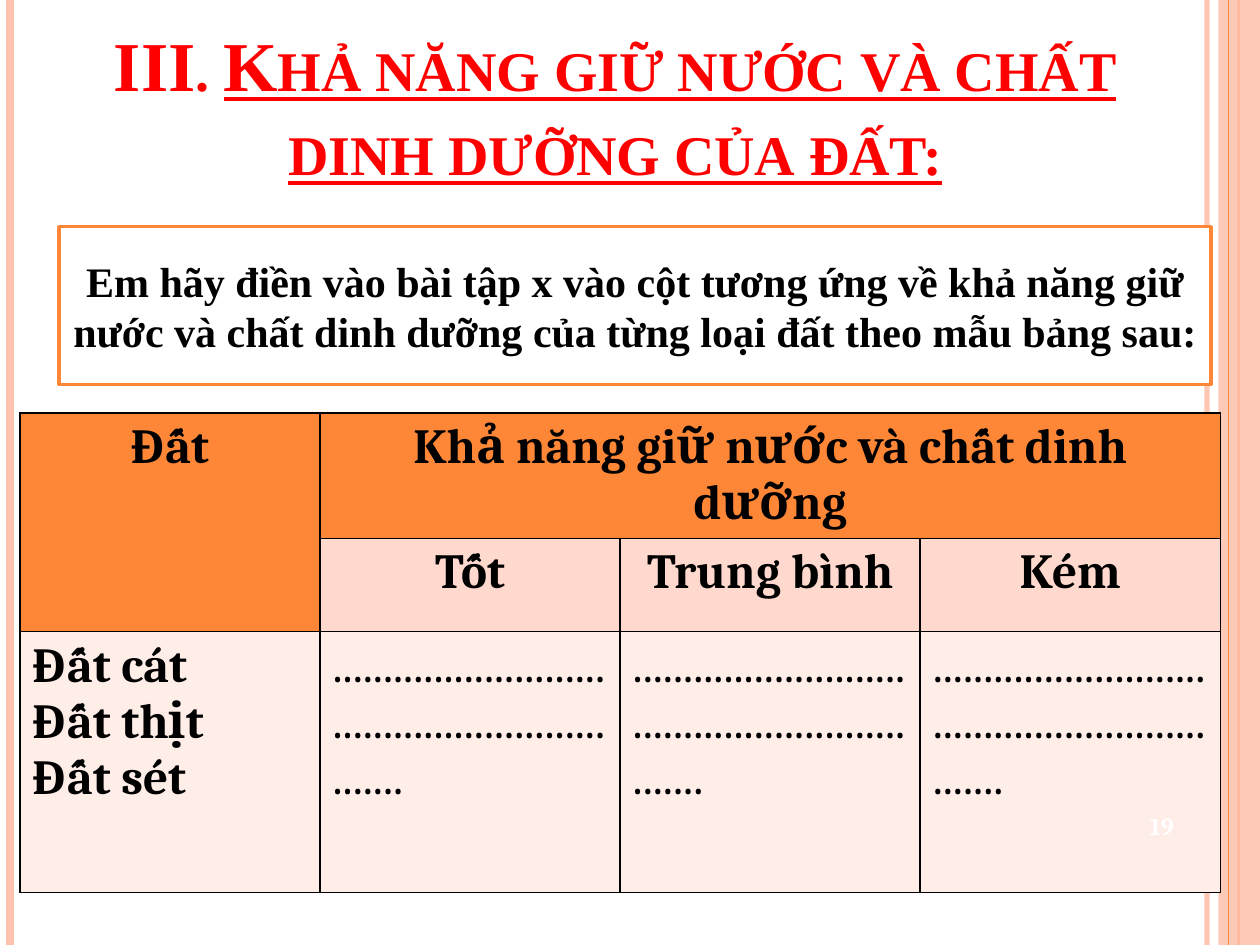
from lxml.etree import SubElement
from pptx import Presentation
from pptx.dml.color import RGBColor
from pptx.enum.shapes import MSO_CONNECTOR, MSO_SHAPE
from pptx.enum.text import MSO_ANCHOR, MSO_AUTO_SIZE, PP_ALIGN
from pptx.oxml.ns import qn
from pptx.util import Cm, Pt

ORANGE = "FE8637"
PEACH = "FEC3AE"
BLACK = "000000"
HEADING_FONT = "Times New Roman"
TABLE_FONT = "Cambria"
SLIDE_WIDTH, SLIDE_HEIGHT = 25.4, 19.05
DOTS = "............................................................."


def color(hex_string):
    """Turn a hex string into a colour."""
    return RGBColor.from_string(hex_string)


def set_alpha(fill_properties, percent):
    """Make the solid fill inside the given element partly transparent."""
    color_element = fill_properties.find(".//" + qn("a:srgbClr"))
    SubElement(color_element, qn("a:alpha"), val=str(percent * 1000))


def format_text(text_frame, size, font_name, hex_string, bold=True, alignment=PP_ALIGN.CENTER):
    """Format every run in a text frame alike."""
    for paragraph in text_frame.paragraphs:
        paragraph.alignment = alignment
        for run in paragraph.runs:
            run.font.size = Pt(size)
            run.font.name = font_name
            run.font.bold = bold
            run.font.color.rgb = color(hex_string)


def add_vertical_line(slide, x, width, hex_string, alpha=100):
    """Draw a line over the full height of the slide."""
    line = slide.shapes.add_connector(MSO_CONNECTOR.STRAIGHT, Cm(x), 0, Cm(x), Cm(SLIDE_HEIGHT))
    line.line.width = Pt(width)
    line.line.color.rgb = color(hex_string)
    properties = line._element.spPr
    if alpha < 100:
        set_alpha(properties, alpha)
    SubElement(properties, qn("a:effectLst"))


def add_rectangle(slide, left, top, width, height, fill):
    """Add a flat rectangle without an outline."""
    rectangle = slide.shapes.add_shape(MSO_SHAPE.RECTANGLE, Cm(left), Cm(top), Cm(width), Cm(height))
    rectangle.shadow.inherit = False
    rectangle.fill.solid()
    rectangle.fill.fore_color.rgb = color(fill)
    rectangle.line.fill.background()
    return rectangle


def add_side_stripes(slide):
    """Add the stripes along the left and right edges."""
    add_vertical_line(slide, 24.33, 3, PEACH, alpha=93)
    add_vertical_line(slide, 0.2, 4.5, PEACH)
    add_vertical_line(slide, 24.97, 1.5, ORANGE)
    band = add_rectangle(slide, 24.56, 0, SLIDE_WIDTH - 24.56, SLIDE_HEIGHT, PEACH)
    set_alpha(band._element.spPr, 87)
    add_vertical_line(slide, 24.77, 0.75, ORANGE)


def fill_title(slide):
    """Write the heading in red small capitals."""
    title = slide.shapes.title
    title.left, title.top, title.width, title.height = Cm(0.79), Cm(0.76), Cm(23.22), Cm(3.18)
    text_frame = title.text_frame
    text_frame.auto_size = MSO_AUTO_SIZE.NONE
    text_frame.vertical_anchor = MSO_ANCHOR.BOTTOM
    paragraph = text_frame.paragraphs[0]
    paragraph.text = "III. "
    heading = paragraph.add_run()
    heading.text = "Khả năng giữ nước và chất dinh dưỡng của đất:"
    heading.font.underline = True
    format_text(text_frame, 40, HEADING_FONT, "FF0000")
    for run in paragraph.runs:
        run.font._element.set("cap", "small")


def add_instruction(slide):
    """Add the framed task for the pupils."""
    frame = add_rectangle(slide, 1.19, 4.57, 23.22, 3.18, "FFFFFF")
    frame.line.color.rgb = color(ORANGE)
    frame.line.width = Pt(2)
    text_frame = frame.text_frame
    text_frame.word_wrap = True
    text_frame.vertical_anchor = MSO_ANCHOR.MIDDLE
    text_frame.text = (
        "Em hãy điền vào bài tập x vào cột tương ứng về khả năng giữ nước "
        "và chất dinh dưỡng của từng loại đất theo mẫu bảng sau:"
    )
    format_text(text_frame, 24, HEADING_FONT, BLACK)


def style_cell(cell, fill):
    """Give a cell black borders and a fill."""
    properties = cell._tc.get_or_add_tcPr()
    for side in ("lnL", "lnR", "lnT", "lnB"):
        border = SubElement(properties, qn("a:" + side), w=str(Pt(1)))
        solid_fill = SubElement(border, qn("a:solidFill"))
        SubElement(solid_fill, qn("a:srgbClr"), val=BLACK)
    cell.fill.solid()
    cell.fill.fore_color.rgb = color(fill)


def add_soil_table(slide):
    """Add the table that the pupils fill in."""
    rows = [
        ["Đất", "Khả năng giữ nước và chất dinh dưỡng", "", ""],
        ["", "Tốt", "Trung bình", "Kém"],
        ["Đất cát\nĐất thịt\nĐất sét", DOTS, DOTS, DOTS],
    ]
    heights = [2.46, 1.88, 5.26]
    fills = [ORANGE, "FFD9CE", "FFEDE8"]
    column_width = 6.05
    table = slide.shapes.add_table(
        3, 4, Cm(0.4), Cm(8.33), Cm(4 * column_width), Cm(sum(heights))
    ).table
    for column in table.columns:
        column.width = Cm(column_width)
    for row_index, (texts, height, fill) in enumerate(zip(rows, heights, fills)):
        table.rows[row_index].height = Cm(height)
        is_body = row_index == 2
        for column_index, text in enumerate(texts):
            cell = table.cell(row_index, column_index)
            style_cell(cell, fill)
            cell.text_frame.text = text
            format_text(
                cell.text_frame, 28, TABLE_FONT, BLACK,
                bold=text != DOTS,
                alignment=PP_ALIGN.LEFT if is_body else PP_ALIGN.CENTER,
            )
    table.cell(0, 0).merge(table.cell(1, 0))
    table.cell(0, 1).merge(table.cell(0, 3))


def add_page_number(slide):
    """Add the white page number."""
    box = slide.shapes.add_textbox(Cm(22.66), Cm(15.88), Cm(1.52), Cm(1.52))
    text_frame = box.text_frame
    text_frame.word_wrap = True
    text_frame.vertical_anchor = MSO_ANCHOR.MIDDLE
    text_frame.text = "19"
    format_text(text_frame, 14, TABLE_FONT, "FFFFFF")


def main():
    """Build and save the presentation."""
    presentation = Presentation()
    presentation.slide_width = Cm(SLIDE_WIDTH)
    presentation.slide_height = Cm(SLIDE_HEIGHT)
    slide = presentation.slides.add_slide(presentation.slide_layouts[5])
    add_side_stripes(slide)
    fill_title(slide)
    add_soil_table(slide)
    add_instruction(slide)
    add_page_number(slide)
    presentation.save("out.pptx")


if __name__ == "__main__":
    main()
